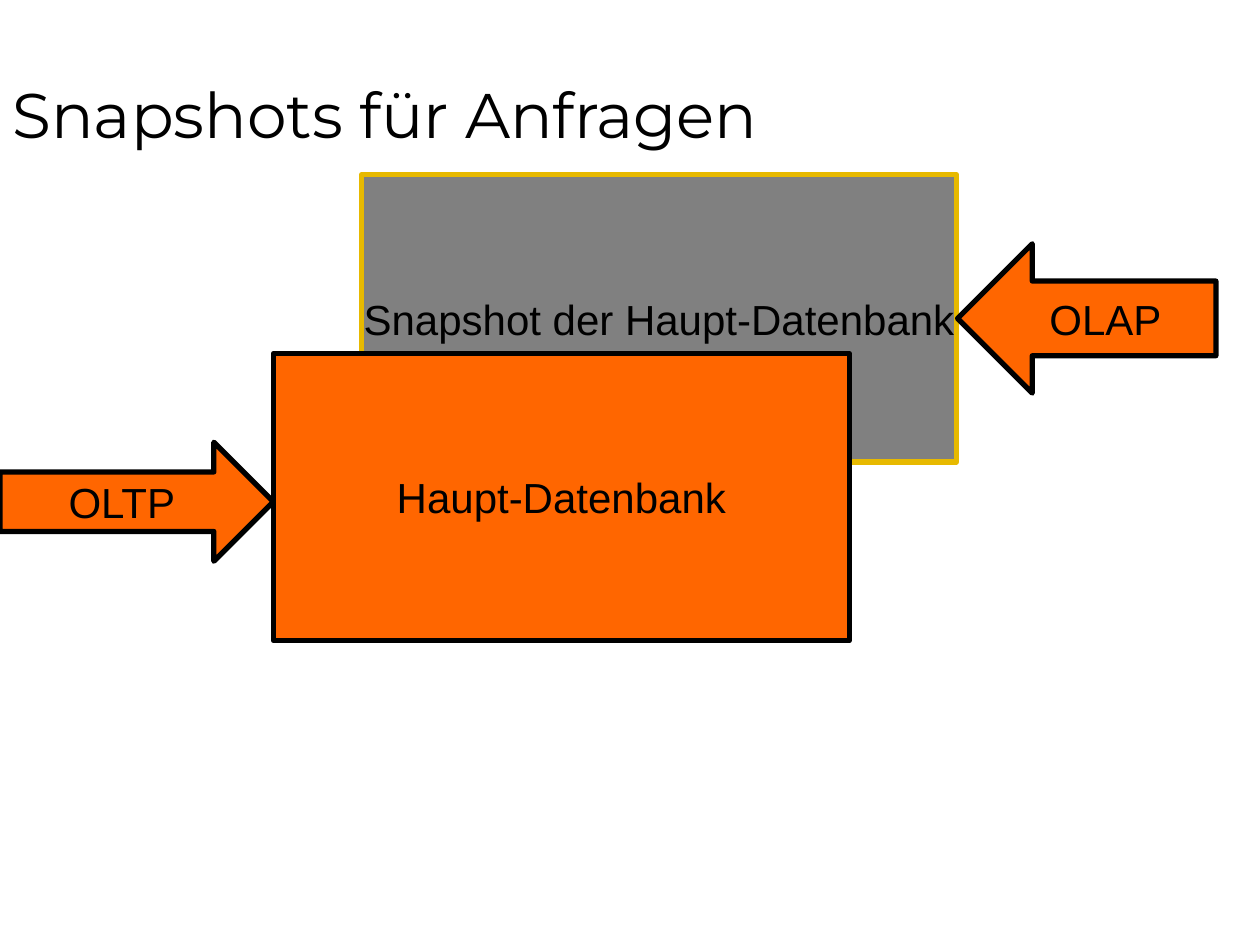
"""Slide on database snapshots that serve analytic queries."""
from dataclasses import dataclass

from pptx import Presentation
from pptx.dml.color import RGBColor as Rgb
from pptx.enum.shapes import MSO_SHAPE as Kind
from pptx.enum.text import MSO_ANCHOR as Anchor, MSO_AUTO_SIZE as Fit, PP_ALIGN as Align
from pptx.util import Inches, Pt

WIDE, HIGH = Inches(10), Inches(7.5)


@dataclass(frozen=True)
class Theme:
    """Colours, fonts and type sizes."""
    ink: Rgb = Rgb(0, 0, 0)
    main: Rgb = Rgb(0xFF, 0x66, 0)
    snap: Rgb = Rgb(0x80, 0x80, 0x80)
    gold: Rgb = Rgb(0xE7, 0xB9, 0)
    head: str = "Montserrat"
    body: str = "Arial"
    big: Pt = Pt(36)
    mid: Pt = Pt(24)
    edge: Pt = Pt(3)


THEME = Theme()


def assign(item, form):
    """Set attributes of an item from a dict."""
    for name, value in form.items():
        setattr(item, name, value)


def place(left, top, width, height):
    """Turn percent of the slide into lengths."""
    return [int(part * full / 100) for part, full in
            zip((left, top, width, height), (WIDE, HIGH, WIDE, HIGH))]


def write(shape, text, font, size, align, form):
    """Put one formatted paragraph into a shape."""
    frame = shape.text_frame
    frame.text = text
    assign(frame, {"auto_size": Fit.NONE, **form})
    para = frame.paragraphs[0]
    para.alignment = align
    face = para.runs[0].font
    assign(face, {"name": font, "size": size})
    face.color.rgb = THEME.ink


def title(slide, text):
    """Fill and move the title placeholder."""
    shape = slide.shapes.title
    assign(shape, dict(zip(("left", "top", "width", "height"),
                           place(0, 0, 100, 16.67))))
    write(shape, text, THEME.head, THEME.big, Align.LEFT,
          {"vertical_anchor": Anchor.BOTTOM, "word_wrap": True})


def block(slide, kind, text, box, fill=THEME.main, edge=THEME.ink):
    """Add a labelled shape with a thick outline."""
    shape = slide.shapes.add_shape(kind, *place(*box))
    shape.shadow.inherit = False
    shape.fill.solid()
    shape.fill.fore_color.rgb = fill
    shape.line.color.rgb = edge
    shape.line.width = THEME.edge
    write(shape, text, THEME.body, THEME.mid, Align.CENTER,
          {"vertical_anchor": Anchor.MIDDLE, "word_wrap": False})


def main():
    """Build and save the slide."""
    deck = Presentation()
    assign(deck, {"slide_width": WIDE, "slide_height": HIGH})
    slide = deck.slides.add_slide(deck.slide_layouts[5])
    title(slide, "Snapshots für Anfragen")
    block(slide, Kind.RIGHT_ARROW, "OLTP", (0, 46.8, 21.7, 12.6))
    block(slide, Kind.RECTANGLE, "Snapshot der Haupt-Datenbank",
          (28.7, 18.5, 47.2, 30.4), THEME.snap, THEME.gold)
    block(slide, Kind.RECTANGLE, "Haupt-Datenbank", (21.7, 37.4, 45.7, 30.4))
    block(slide, Kind.LEFT_ARROW, "OLAP", (76, 25.8, 20.5, 15.8))
    deck.save("out.pptx")


if __name__ == "__main__":
    main()
